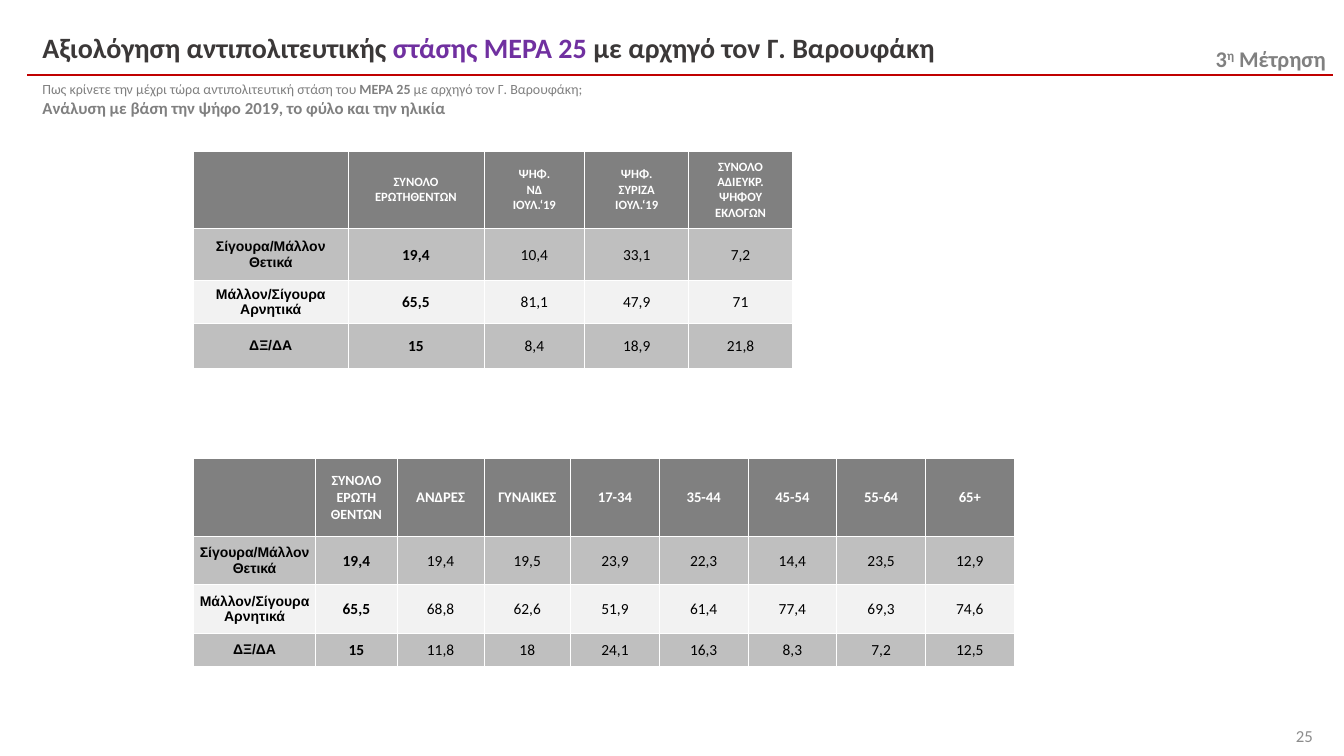
"""Build the slide on how voters rate the opposition stance of ΜΕΡΑ 25."""
from lxml.etree import SubElement
from pptx import Presentation
from pptx.dml.color import RGBColor
from pptx.enum.shapes import MSO_CONNECTOR, MSO_SHAPE
from pptx.enum.text import MSO_ANCHOR, MSO_AUTO_SIZE, PP_ALIGN
from pptx.oxml.ns import qn
from pptx.util import Inches, Pt

WHITE = RGBColor(0xFF, 0xFF, 0xFF)
BLACK = RGBColor(0x00, 0x00, 0x00)
DARK = RGBColor(0x3B, 0x38, 0x38)
PURPLE = RGBColor(0x70, 0x30, 0xA0)
RED = RGBColor(0xC0, 0x00, 0x00)
GRAY = RGBColor(0x80, 0x80, 0x80)
PAGE_GRAY = RGBColor(0x8C, 0x8C, 0x8C)
BAND_DARK = RGBColor(0xBF, 0xBF, 0xBF)
BAND_LIGHT = RGBColor(0xF2, 0xF2, 0xF2)

ANSWERS = ["Σίγουρα/Μάλλον Θετικά", "Μάλλον/Σίγουρα Αρνητικά", "ΔΞ/ΔΑ"]


def style_font(font, size, color, bold, name="Calibri"):
    font.name, font.size, font.bold = name, Pt(size), bold
    font.color.rgb = color


def add_white_borders(cell):
    properties = cell._tc.get_or_add_tcPr()
    for side in ("lnL", "lnR", "lnT", "lnB"):
        border = SubElement(properties, qn(f"a:{side}"), w=str(Pt(0.5)))
        SubElement(SubElement(border, qn("a:solidFill")), qn("a:srgbClr"), val=str(WHITE))


prs = Presentation()
prs.slide_width, prs.slide_height = Inches(13.33), Inches(7.5)
slide = prs.slides.add_slide(prs.slide_layouts[5])

rule = slide.shapes.add_connector(
    MSO_CONNECTOR.STRAIGHT, Inches(0.27), Inches(0.74), Inches(13.22), Inches(0.74))
rule.line.color.rgb = RED
rule.line.width = Pt(1.5)
SubElement(rule._element.spPr, qn("a:effectLst"))

wave = slide.shapes.add_textbox(Inches(11.96), Inches(0.4), Inches(1.37), Inches(0.37))
wave.text_frame.word_wrap = False
wave.text_frame.auto_size = MSO_AUTO_SIZE.SHAPE_TO_FIT_TEXT
wave_line = wave.text_frame.paragraphs[0]
for text, baseline in [("3", 0), ("η", 30000), (" Μέτρηση", 0)]:
    run = wave_line.add_run()
    run.text = text
    if baseline:
        run._r.get_or_add_rPr().set("baseline", str(baseline))
style_font(wave_line.font, 16, GRAY, True)

title = slide.shapes.title
title.left, title.top = Inches(0.32), Inches(0.25)
title.width, title.height = Inches(13.54), Inches(1.25)
heading = title.text_frame
heading.word_wrap = True
heading.auto_size = MSO_AUTO_SIZE.NONE
heading.vertical_anchor = MSO_ANCHOR.TOP
heading_lines = [
    (20, 0, [("Αξιολόγηση αντιπολιτευτικής ", DARK, True),
             ("στάσης ΜΕΡΑ 25 ", PURPLE, True),
             ("με αρχηγό τον Γ. Βαρουφάκη", DARK, True)]),
    (10, 12, [("Πως κρίνετε την μέχρι τώρα αντιπολιτευτική στάση του ", GRAY, False),
              ("ΜΕΡΑ 25", GRAY, True),
              (" με αρχηγό τον Γ. Βαρουφάκη;", GRAY, False)]),
    (12, 0, [("Ανάλυση με βάση την ψήφο 2019, το φύλο και την ηλικία", GRAY, True)]),
]
for index, (size, space_before, pieces) in enumerate(heading_lines):
    line = heading.add_paragraph() if index else heading.paragraphs[0]
    line.alignment = PP_ALIGN.LEFT
    line.space_before = Pt(space_before)
    for text, color, bold in pieces:
        run = line.add_run()
        run.text = text
        style_font(run.font, size, color, bold)

page = slide.shapes.add_shape(
    MSO_SHAPE.RECTANGLE, Inches(12.48), Inches(7.1), Inches(0.64), Inches(0.4))
page.shadow.inherit = False
page.fill.solid()
page.fill.fore_color.rgb = WHITE
page.line.fill.background()
page.text_frame.text = "25"
page.text_frame.vertical_anchor = MSO_ANCHOR.MIDDLE
page_line = page.text_frame.paragraphs[0]
page_line.alignment = PP_ALIGN.RIGHT
style_font(page_line.font, 12, PAGE_GRAY, False)

by_vote = {
    "top": 1.5,
    "widths": [1.53, 1.35, 1, 1.03, 1.03],
    "heights": [0.77, 0.51, 0.43, 0.44],
    "header_sizes": [9] * 5,
    "headers": ["", "ΣΥΝΟΛΟ\nΕΡΩΤΗΘΕΝΤΩΝ", "ΨΗΦ.\nΝΔ\nΙΟΥΛ.‘19",
                "ΨΗΦ.\nΣΥΡΙΖΑ\nΙΟΥΛ.‘19", "ΣΥΝΟΛΟ\nΑΔΙΕΥΚΡ.\nΨΗΦΟΥ\nΕΚΛΟΓΩΝ"],
    "values": [["19,4", "10,4", "33,1", "7,2"],
               ["65,5", "81,1", "47,9", "71"],
               ["15", "8,4", "18,9", "21,8"]],
}
by_sex_and_age = {
    "top": 4.55,
    "widths": [1.21, 0.81] + [0.86] * 2 + [0.88] * 5,
    "heights": [0.77, 0.48, 0.48, 0.33],
    "header_sizes": [10] * 2 + [10.5] * 7,
    "headers": ["", "ΣΥΝΟΛΟ\nΕΡΩΤΗ\nΘΕΝΤΩΝ", "ΑΝΔΡΕΣ", "ΓΥΝΑΙΚΕΣ",
                "17-34", "35-44", "45-54", "55-64", "65+"],
    "values": [["19,4", "19,4", "19,5", "23,9", "22,3", "14,4", "23,5", "12,9"],
               ["65,5", "68,8", "62,6", "51,9", "61,4", "77,4", "69,3", "74,6"],
               ["15", "11,8", "18", "24,1", "16,3", "8,3", "7,2", "12,5"]],
}

for breakdown in (by_vote, by_sex_and_age):
    widths, heights = breakdown["widths"], breakdown["heights"]
    table = slide.shapes.add_table(
        len(heights), len(widths), Inches(1.92), Inches(breakdown["top"]),
        Inches(sum(widths)), Inches(sum(heights))).table
    for column, width in zip(table.columns, widths):
        column.width = Inches(width)
    for row, height in zip(table.rows, heights):
        row.height = Inches(height)

    answer_rows = [[answer] + values for answer, values in zip(ANSWERS, breakdown["values"])]
    for r, texts in enumerate([breakdown["headers"]] + answer_rows):
        for c, text in enumerate(texts):
            cell = table.cell(r, c)
            cell.text = text
            cell.vertical_anchor = MSO_ANCHOR.MIDDLE
            add_white_borders(cell)
            cell.fill.solid()
            if r == 0:
                cell.fill.fore_color.rgb = GRAY
            else:
                cell.fill.fore_color.rgb = BAND_DARK if r % 2 else BAND_LIGHT
                cell.margin_left = cell.margin_right = cell.margin_top = Inches(0.01)
                cell.margin_bottom = 0
            for line in cell.text_frame.paragraphs:
                line.alignment = PP_ALIGN.CENTER
                if r == 0:
                    style_font(line.font, breakdown["header_sizes"][c], WHITE, True)
                elif c == 0:
                    style_font(line.font, 10, BLACK, True, "Arial")
                else:
                    style_font(line.font, 11, BLACK, c == 1)

prs.save("out.pptx")
